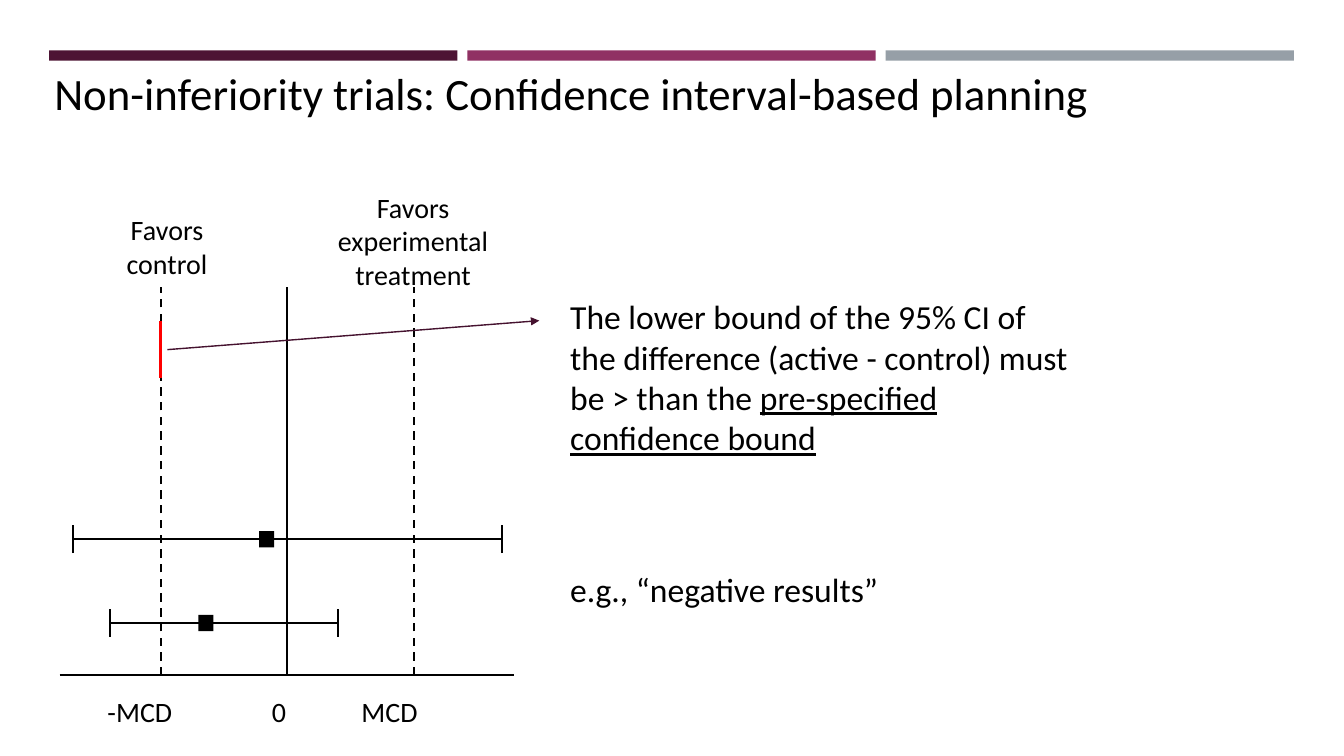
from dataclasses import dataclass

from lxml import etree
from pptx import Presentation
from pptx.dml.color import RGBColor
from pptx.enum.dml import MSO_LINE
from pptx.enum.shapes import MSO_CONNECTOR, MSO_SHAPE
from pptx.enum.text import MSO_ANCHOR, MSO_AUTO_SIZE, PP_ALIGN
from pptx.oxml.ns import qn
from pptx.slide import Slide
from pptx.util import Cm, Pt

RECTANGLE = MSO_SHAPE.RECTANGLE
STRAIGHT = MSO_CONNECTOR.STRAIGHT
DASH = MSO_LINE.DASH
LEFT, CENTER = PP_ALIGN.LEFT, PP_ALIGN.CENTER


@dataclass(frozen=True)
class Theme:
    font: str = "Calibri"
    ink: str = "000000"
    bound: str = "FF0000"
    arrow: str = "45122F"
    bands: tuple[str, ...] = ("4D1434", "903163", "969FA7")
    title: int = 32
    body: int = 24
    label: int = 20
    rule: float = 1.5


THEME = Theme()


@dataclass(frozen=True)
class Label:
    """Text in a box; an optional underlined ending follows the plain text."""
    text: str
    left: float
    top: float
    width: float
    height: float
    size: int = THEME.label
    align: PP_ALIGN = LEFT
    underlined: str = ""
    wrap: bool = True


@dataclass(frozen=True)
class Interval:
    low: float
    estimate: float
    high: float
    y: float


# Forest plot geometry, in centimetres
ZERO, MARGIN = 7.24, 3.19
PLOT_TOP, AXIS_Y = 7.24, 17.02
AXIS_LEFT, AXIS_RIGHT = 1.5, 12.95
CAP = 0.35
MARKER_WIDTH, MARKER_HEIGHT = 0.38, 0.41
BAND_LEFT, BAND_PITCH, BAND_WIDTH = 1.24, 10.54, 10.29
TICK_TOP, TICK_HEIGHT = 17.37, 1.14
NOTE_LEFT = 14.12

INTERVALS = (
    Interval(1.83, 6.72, 12.65, 13.59),
    Interval(2.77, 5.19, 8.51, 15.7),
)

LABELS = (
    Label("Non-inferiority trials: Confidence interval-based planning",
          1.12, 1.52, 26.77, 1.63, THEME.title, wrap=False),
    Label("Favors control", 2.62, 5.23, 3.18, 2.03, align=CENTER),
    Label("Favors experimental treatment", 8.05, 4.67, 4.72, 2.92, align=CENTER),
    Label("-MCD", 2.46, TICK_TOP, 3.18, TICK_HEIGHT),
    Label("0", 6.6, TICK_TOP, 1.27, TICK_HEIGHT),
    Label("MCD", 8.86, TICK_TOP, 3.18, TICK_HEIGHT),
    Label("The lower bound of the 95% CI of the difference (active - control) "
          "must be > than the ", NOTE_LEFT, 7.34, 13.21, 5.38, THEME.body,
          underlined="pre-specified confidence bound"),
    Label("e.g., “negative results”", NOTE_LEFT, 14.22, 10.8, 1.27, THEME.body),
)


def add_block(page: Slide, left: float, top: float, width: float, height: float,
              color: str) -> None:
    block = page.shapes.add_shape(RECTANGLE, Cm(left), Cm(top), Cm(width), Cm(height))
    block.shadow.inherit = False
    block.fill.solid()
    block.fill.fore_color.rgb = RGBColor.from_string(color)
    block.line.fill.background()


def add_line(page: Slide, x1: float, y1: float, x2: float, y2: float,
             color: str = THEME.ink, weight: float = THEME.rule,
             dashed: bool = False, arrow: bool = False) -> None:
    connector = page.shapes.add_connector(STRAIGHT, Cm(x1), Cm(y1), Cm(x2), Cm(y2))
    connector.line.color.rgb = RGBColor.from_string(color)
    connector.line.width = Pt(weight)
    if dashed:
        connector.line.dash_style = DASH
    if arrow:
        outline = connector.line._get_or_add_ln()
        etree.SubElement(outline, qn("a:tailEnd"), type="triangle")
    etree.SubElement(connector._element.spPr, qn("a:effectLst"))


def add_label(page: Slide, label: Label) -> None:
    box = page.shapes.add_textbox(Cm(label.left), Cm(label.top),
                                  Cm(label.width), Cm(label.height))
    frame_format = {"word_wrap": label.wrap, "auto_size": MSO_AUTO_SIZE.NONE,
                    "vertical_anchor": MSO_ANCHOR.TOP}
    for name, value in frame_format.items():
        setattr(box.text_frame, name, value)
    para = box.text_frame.paragraphs[0]
    para.alignment = label.align
    for text, underline in ((label.text, False), (label.underlined, True)):
        if not text:
            continue
        span = para.add_run()
        span.text = text
        font_format = {"name": THEME.font, "size": Pt(label.size),
                       "underline": underline or None}
        for name, value in font_format.items():
            setattr(span.font, name, value)
        span.font.color.rgb = RGBColor.from_string(THEME.ink)


def add_interval(page: Slide, interval: Interval) -> None:
    """Draw the confidence interval, its end caps and its point estimate."""
    add_line(page, interval.low, interval.y, interval.high, interval.y)
    for end in (interval.low, interval.high):
        add_line(page, end, interval.y + CAP, end, interval.y - CAP)
    add_block(page, interval.estimate - MARKER_WIDTH / 2, interval.y - MARKER_HEIGHT / 2,
              MARKER_WIDTH, MARKER_HEIGHT, THEME.ink)


def main() -> None:
    deck = Presentation()
    deck.slide_width, deck.slide_height = Cm(33.87), Cm(19.05)
    page = deck.slides.add_slide(deck.slide_layouts[6])

    for index, color in enumerate(THEME.bands):
        add_block(page, BAND_LEFT + index * BAND_PITCH, 1.27, BAND_WIDTH, 0.26, color)

    add_line(page, AXIS_LEFT, AXIS_Y, AXIS_RIGHT, AXIS_Y)
    for offset in (-MARGIN, 0, MARGIN):
        x = ZERO + offset
        add_line(page, x, AXIS_Y, x, PLOT_TOP, dashed=offset != 0)

    add_line(page, 4.22, 8.81, 13.59, 8.08, THEME.arrow, 1, arrow=True)
    add_line(page, ZERO - MARGIN, 8.08, ZERO - MARGIN, 9.53, THEME.bound, 2)
    for interval in INTERVALS:
        add_interval(page, interval)
    for label in LABELS:
        add_label(page, label)

    deck.save("out.pptx")


if __name__ == "__main__":
    main()
